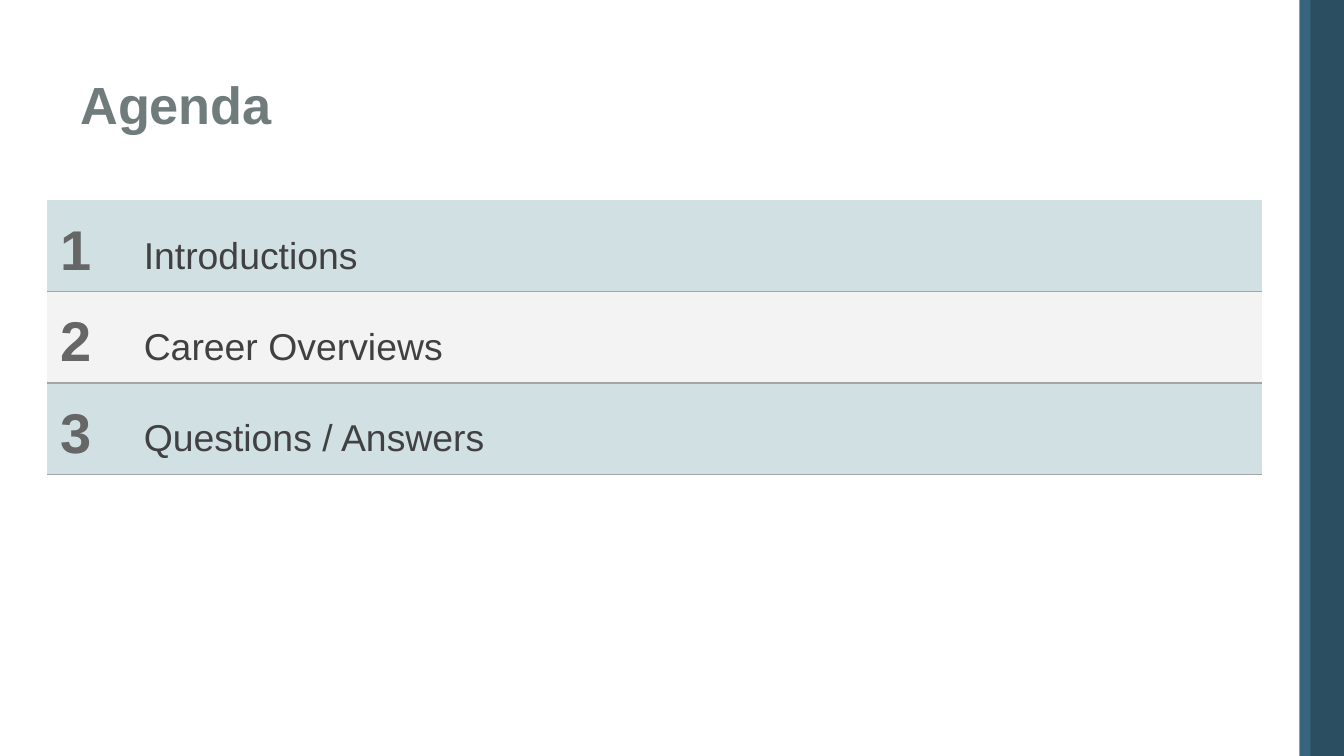
from dataclasses import dataclass

from lxml import etree
from pptx import Presentation
from pptx import util as u
from pptx.dml import color as c
from pptx.enum import shapes, text
from pptx.oxml import ns


@dataclass(frozen=True)
class Theme:
    font: str = "Arial"
    title: str = "707C7C"
    number: str = "666666"
    topic: str = "414042"
    rule: str = "A3A5A8"
    bands: tuple = ("D0E0E3", "F3F3F3")
    title_size: int = 28
    number_size: int = 30
    topic_size: int = 20
    rule_width: float = 0.75


@dataclass(frozen=True)
class Bar:
    width: float
    color: str


THEME = Theme()
BARS = [Bar(0.38, "2B4E61"), Bar(0.08, "37657E")]
TOPICS = ["Introductions", "Career Overviews", "Questions / Answers"]
COLS = [0.62, 8.42]
ROW = 0.68


def write(frame, words: str, *, size: float, color: str, bold: bool = False) -> None:
    run = frame.paragraphs[0].add_run()
    run.text = words
    font = run.font
    font.name, font.size, font.bold = THEME.font, u.Pt(size), bold
    font.color.rgb = c.RGBColor.from_string(color)


def paint(fill, color: str) -> None:
    fill.solid()
    fill.fore_color.rgb = c.RGBColor.from_string(color)


def draw_bar(slide, bar: Bar) -> None:
    shape = slide.shapes.add_shape(
        shapes.MSO_SHAPE.RECTANGLE,
        u.Inches(9.67), u.Inches(-0.08), u.Inches(bar.width), u.Inches(5.83))
    shape.shadow.inherit = False
    paint(shape.fill, bar.color)
    shape.line.fill.background()


def set_edge(cell, side: str, shown: bool) -> None:
    line = etree.SubElement(cell._tc.get_or_add_tcPr(), ns.qn(f"a:ln{side}"))
    if shown:
        line.set("w", str(u.Pt(THEME.rule_width)))
        fill = etree.SubElement(line, ns.qn("a:solidFill"))
        etree.SubElement(fill, ns.qn("a:srgbClr"), val=THEME.rule)
    else:
        etree.SubElement(line, ns.qn("a:noFill"))


def style_cell(cell, row: int, bottom: float) -> None:
    # Edges come before the fill in the cell properties
    for side, shown in (("L", False), ("R", False), ("T", row > 0), ("B", True)):
        set_edge(cell, side, shown)
    paint(cell.fill, THEME.bands[row % len(THEME.bands)])
    cell.vertical_anchor = text.MSO_ANCHOR.BOTTOM
    cell.margin_left = cell.margin_right = u.Inches(0.1)
    cell.margin_top, cell.margin_bottom = u.Inches(0.07), u.Inches(bottom)


def draw_table(slide, topics: list[str]) -> None:
    table = slide.shapes.add_table(
        len(topics), len(COLS), u.Inches(0.35), u.Inches(1.49),
        u.Inches(sum(COLS)), u.Inches(ROW * len(topics))).table
    table.first_row = table.horz_banding = False
    for col, width in zip(table.columns, COLS):
        col.width = u.Inches(width)
    for row, topic in enumerate(topics):
        number, label = table.cell(row, 0), table.cell(row, 1)
        style_cell(number, row, bottom=0.07)
        style_cell(label, row, bottom=0.11)
        write(number.text_frame, str(row + 1),
              size=THEME.number_size, color=THEME.number, bold=True)
        write(label.text_frame, topic, size=THEME.topic_size, color=THEME.topic)


def draw_title(slide, words: str) -> None:
    box = slide.shapes.add_textbox(
        u.Inches(0.5), u.Inches(0.47), u.Inches(8.83), u.Inches(0.6))
    frame = box.text_frame
    frame.word_wrap = True
    frame.vertical_anchor = text.MSO_ANCHOR.MIDDLE
    write(frame, words, size=THEME.title_size, color=THEME.title, bold=True)


def main() -> None:
    # Widescreen page, 16 by 9
    deck = Presentation()
    deck.slide_width = u.Inches(10)
    deck.slide_height = u.Inches(10) * 9 // 16
    slide = deck.slides.add_slide(deck.slide_layouts[6])

    # Side stripe
    for bar in BARS:
        draw_bar(slide, bar)

    # Content
    draw_table(slide, TOPICS)
    draw_title(slide, "Agenda")

    deck.save("out.pptx")


if __name__ == "__main__":
    main()
